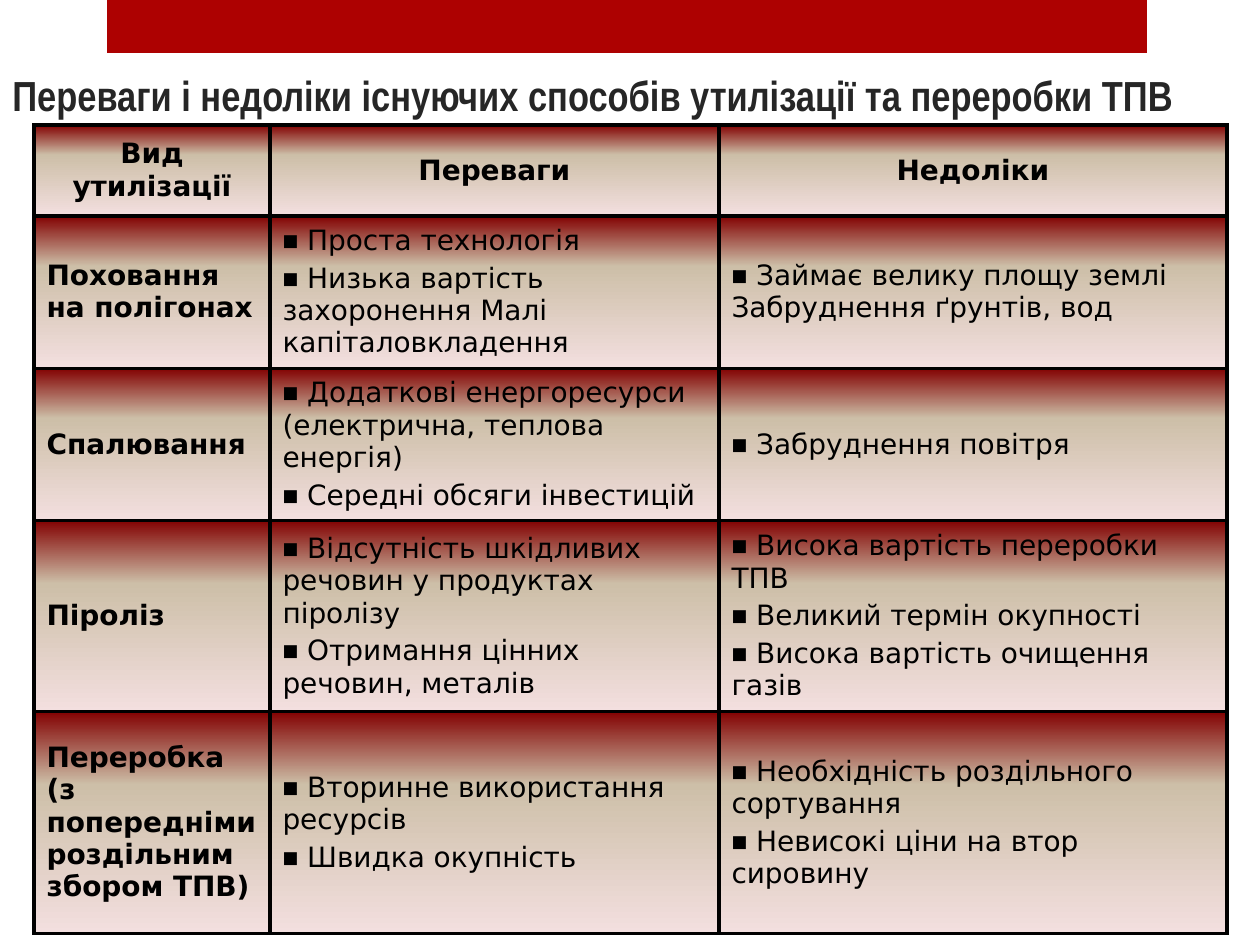
from pptx import Presentation
from pptx import util as u
from pptx.dml.color import RGBColor
from pptx.enum import shapes, text
from pptx.oxml import parse_xml
from pptx.oxml.ns import nsdecls

EMU_PER_PX = 914400 / 126
COLORS = {"bar": "AD0101", "title": "262626", "ink": "000000",
          "top": "820101", "sand": "CDBFA8", "rose": "F3DFDF"}
GRADIENT = [(0, "top"), (33, "sand"), (100, "rose")]
COLUMN_WIDTHS = [236, 449, 508]
ROW_HEIGHTS = [91, 147, 147, 186, 222]

HEADERS = ["Вид утилізації", "Переваги", "Недоліки"]
METHODS = [
    ("Поховання на полігонах",
     ["Проста технологія", "Низька вартість захоронення Малі капіталовкладення"],
     ["Займає велику площу землі Забруднення ґрунтів, вод"]),
    ("Спалювання",
     ["Додаткові енергоресурси (електрична, теплова енергія)",
      "Середні обсяги інвестицій"],
     ["Забруднення повітря"]),
    ("Піроліз",
     ["Відсутність шкідливих речовин у продуктах піролізу",
      "Отримання цінних речовин, металів"],
     ["Висока вартість переробки ТПВ", "Великий термін окупності",
      "Висока вартість очищення газів"]),
    ("Переробка (з попередніми роздільним збором ТПВ)",
     ["Вторинне використання ресурсів", "Швидка окупність"],
     ["Необхідність роздільного сортування", "Невисокі ціни на втор сировину"]),
]


def px(length):
    return u.Emu(round(length * EMU_PER_PX))


def solid(name):
    return f'<a:solidFill><a:srgbClr val="{COLORS[name]}"/></a:solidFill>'


def element(tag, attributes="", inner=""):
    return parse_xml(f'<a:{tag} {nsdecls("a")} {attributes}>{inner}</a:{tag}>')


class SlideBuilder:
    title_font, table_font = "Arial Narrow", "DejaVu Sans"
    title_size, table_size = 24, 16

    def __init__(self, page):
        self.page = page

    def style(self, para, font, size, color, bold):
        for span in para.runs:
            span.font.name = font
            span.font.size = u.Pt(size)
            span.font.bold = bold
            span.font.color.rgb = RGBColor.from_string(COLORS[color])

    def bar(self, left, top, width, height):
        bar = self.page.shapes.add_shape(
            shapes.MSO_SHAPE.RECTANGLE, px(left), px(top), px(width), px(height))
        bar.shadow.inherit = False
        bar.fill.solid()
        bar.fill.fore_color.rgb = RGBColor.from_string(COLORS["bar"])
        bar.line.fill.background()

    def title(self, left, top, width, height, wording):
        box = self.page.shapes.add_textbox(px(left), px(top), px(width), px(height))
        frame = box.text_frame
        frame.text = wording
        frame.word_wrap = True
        frame.vertical_anchor = text.MSO_ANCHOR.BOTTOM
        self.style(frame.paragraphs[0], self.title_font, self.title_size, "title", True)

    def table(self, left, top, widths, heights):
        table = self.page.shapes.add_table(
            len(heights), len(widths), px(left), px(top),
            px(sum(widths)), px(sum(heights))).table
        table.first_row = table.horz_banding = False
        for column, width in zip(table.columns, widths):
            column.width = px(width)
        for row, height in zip(table.rows, heights):
            row.height = px(height)
        return table

    def cell(self, cell, lines, bold=False, centered=False, bulleted=False):
        cell.vertical_anchor = text.MSO_ANCHOR.MIDDLE
        self.cell_look(cell)
        for index, line in enumerate(lines):
            frame = cell.text_frame
            para = frame.add_paragraph() if index else frame.paragraphs[0]
            para.text = f" {line}" if bulleted else line
            if index:
                para.space_before = u.Pt(3)
            if bulleted:
                self.bullet(para)
            if centered:
                para.alignment = text.PP_ALIGN.CENTER
            self.style(para, self.table_font, self.table_size, "ink", bold)

    def cell_look(self, cell):
        properties = cell._tc.get_or_add_tcPr()
        for side in ("lnL", "lnR", "lnT", "lnB"):
            properties.append(element(side, f'w="{u.Pt(2.25)}"', solid("ink")))
        stops = "".join(
            f'<a:gs pos="{position * 1000}"><a:srgbClr val="{COLORS[name]}"/></a:gs>'
            for position, name in GRADIENT)
        properties.append(element(
            "gradFill", 'rotWithShape="1"',
            f'<a:gsLst>{stops}</a:gsLst><a:lin ang="5400000" scaled="1"/>'))

    def bullet(self, para):
        properties = para._p.get_or_add_pPr()
        properties.set("marL", "0")
        properties.set("indent", "0")
        properties.append(element("buClr", inner=f'<a:srgbClr val="{COLORS["ink"]}"/>'))
        properties.append(element("buSzPct", 'val="60000"'))
        properties.append(element("buFont", f'typeface="{self.table_font}"'))
        properties.append(element("buChar", 'char="■"'))


def main():
    deck = Presentation()
    deck.slide_width, deck.slide_height = px(1260), px(945)
    builder = SlideBuilder(deck.slides.add_slide(deck.slide_layouts[6]))

    # Top bar and heading
    builder.bar(107, 0, 1040, 53)
    builder.title(0, 16, 1260, 110,
                  "Переваги і недоліки існуючих способів утилізації та переробки ТПВ")

    # Comparison table
    table = builder.table(34, 125, COLUMN_WIDTHS, ROW_HEIGHTS)
    for column, header in enumerate(HEADERS):
        builder.cell(table.cell(0, column), [header], bold=True, centered=True)
    for row, (method, benefits, drawbacks) in enumerate(METHODS, start=1):
        builder.cell(table.cell(row, 0), [method], bold=True)
        builder.cell(table.cell(row, 1), benefits, bulleted=True)
        builder.cell(table.cell(row, 2), drawbacks, bulleted=True)

    deck.save("out.pptx")


if __name__ == "__main__":
    main()
